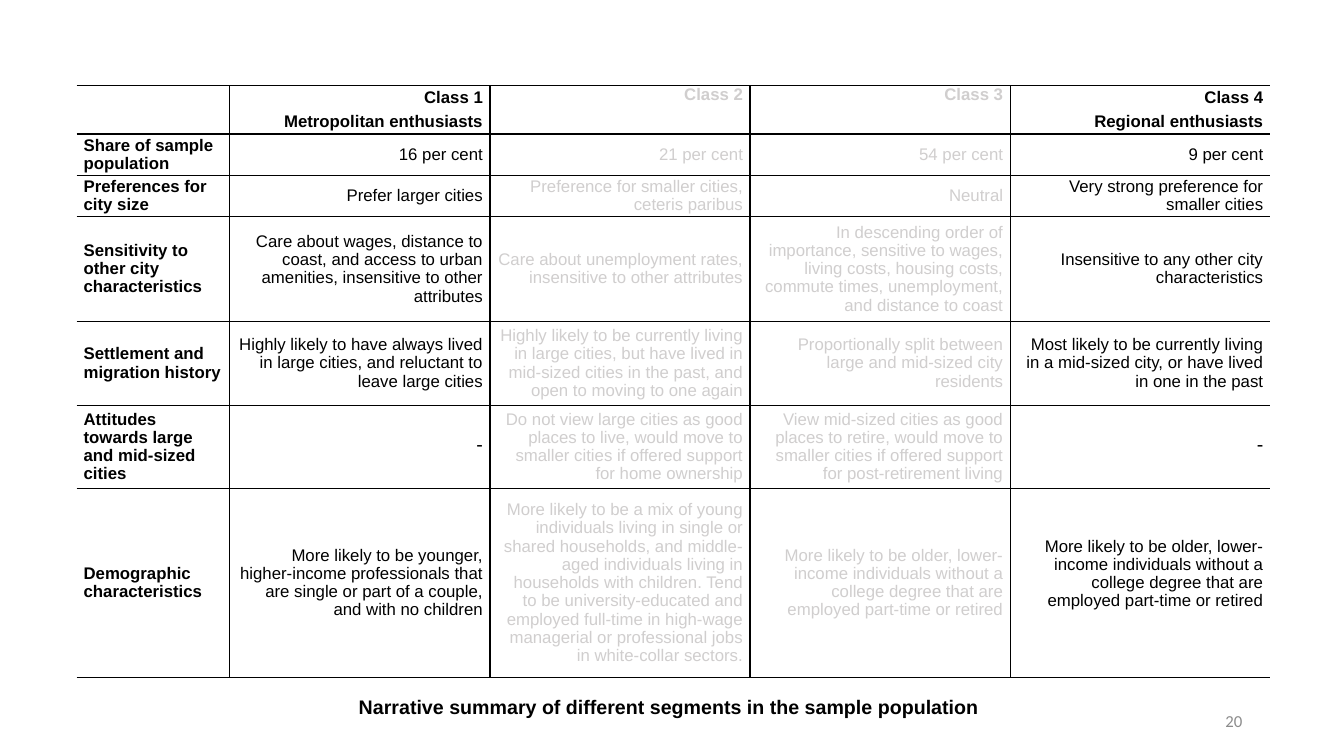
"""Build a slide with a table that summarises four segments of a sample population."""
from lxml import etree
from pptx import Presentation
from pptx.dml.color import RGBColor
from pptx.enum.text import MSO_ANCHOR, MSO_AUTO_SIZE, PP_ALIGN
from pptx.oxml.ns import qn
from pptx.util import Emu, Pt

PX = 9144
LEFT, CENTER, RIGHT = PP_ALIGN.LEFT, PP_ALIGN.CENTER, PP_ALIGN.RIGHT
TOP, MIDDLE = MSO_ANCHOR.TOP, MSO_ANCHOR.MIDDLE
FIT_SHAPE = MSO_AUTO_SIZE.SHAPE_TO_FIT_TEXT
TITLE_ONLY = 5

BLACK = RGBColor(0x00, 0x00, 0x00)
MUTED = RGBColor(0xD0, 0xCE, 0xCE)
PAGE_GRAY = RGBColor(0x8C, 0x8C, 0x8C)

COLUMN_WIDTHS = [152, 258, 258, 258, 258]
ROW_HEIGHTS = [48, 41, 41, 104, 83, 83, 187]
MUTED_COLUMNS = (2, 3)
OLDER_PROFILE = (
    "More likely to be older, lower-income individuals without a college degree "
    "that are employed part-time or retired"
)
SEGMENTS = [
    ["", "Class 1\nMetropolitan enthusiasts", "Class 2", "Class 3",
     "Class 4\nRegional enthusiasts"],
    ["Share of sample population", "16 per cent", "21 per cent", "54 per cent", "9 per cent"],
    ["Preferences for city size", "Prefer larger cities",
     "Preference for smaller cities, ceteris paribus", "Neutral",
     "Very strong preference for smaller cities"],
    ["Sensitivity to other city characteristics",
     "Care about wages, distance to coast, and access to urban amenities, "
     "insensitive to other attributes",
     "Care about unemployment rates, insensitive to other attributes",
     "In descending order of importance, sensitive to wages, living costs, housing costs, "
     "commute times, unemployment, and distance to coast",
     "Insensitive to any other city characteristics"],
    ["Settlement and migration history",
     "Highly likely to have always lived in large cities, and reluctant to leave large cities",
     "Highly likely to be currently living in large cities, but have lived in mid-sized cities "
     "in the past, and open to moving to one again",
     "Proportionally split between large and mid-sized city residents",
     "Most likely to be currently living in a mid-sized city, or have lived in one in the past"],
    ["Attitudes towards large and mid-sized cities", "-",
     "Do not view large cities as good places to live, would move to smaller cities "
     "if offered support for home ownership",
     "View mid-sized cities as good places to retire, would move to smaller cities "
     "if offered support for post-retirement living",
     "-"],
    ["Demographic characteristics",
     "More likely to be younger, higher-income professionals that are single or part of a "
     "couple, and with no children",
     "More likely to be a mix of young individuals living in single or shared households, and "
     "middle-aged individuals living in households with children. Tend to be "
     "university-educated and employed full-time in high-wage managerial or professional jobs "
     "in white-collar sectors.",
     OLDER_PROFILE, OLDER_PROFILE],
]


def px(length):
    return Emu(length * PX)


def write(frame, text, size=12, font="Arial", color=BLACK, bold=False, align=LEFT,
          line=None, gap=0):
    for index, words in enumerate(text.split("\n")):
        para = frame.add_paragraph() if index else frame.paragraphs[0]
        para.alignment = align
        para.space_before = para.space_after = Pt(gap)
        if line:
            para.line_spacing = Pt(line)
        span = para.add_run()
        span.text = words
        span.font.size = Pt(size)
        span.font.name = font
        span.font.bold = bold
        span.font.color.rgb = color


def draw_borders(cell, hidden):
    properties = cell._tc.get_or_add_tcPr()
    for index, side in enumerate(("lnL", "lnR", "lnT", "lnB")):
        border = etree.Element(qn(f"a:{side}"), w=str(Pt(1)))
        if side == hidden:
            etree.SubElement(border, qn("a:noFill"))
        else:
            fill = etree.SubElement(border, qn("a:solidFill"))
            etree.SubElement(fill, qn("a:srgbClr"), val=str(BLACK))
        properties.insert(index, border)


class Page:
    """Hold the current slide and add styled elements to it."""

    def __init__(self, deck):
        self.slide = deck.slides.add_slide(deck.slide_layouts[TITLE_ONLY])

    def title(self, text, left, top, width, height, **style):
        box = self.slide.shapes.title
        box.left, box.top, box.width, box.height = map(px, (left, top, width, height))
        frame = box.text_frame
        frame.word_wrap = True
        frame.auto_size = FIT_SHAPE
        frame.vertical_anchor = TOP
        write(frame, text, **style)

    def text(self, text, left, top, width, height, **style):
        box = self.slide.shapes.add_textbox(*map(px, (left, top, width, height)))
        box.text_frame.word_wrap = True
        box.text_frame.vertical_anchor = MIDDLE
        write(box.text_frame, text, **style)

    def table(self, rows, left, top, widths, heights):
        bounds = map(px, (left, top, sum(widths), sum(heights)))
        table = self.slide.shapes.add_table(len(rows), len(widths), *bounds).table
        table.first_row = table.horz_banding = False
        for column, width in zip(table.columns, widths):
            column.width = px(width)
        for row, height in zip(table.rows, heights):
            row.height = px(height)
        for row_index, texts in enumerate(rows):
            for column_index, text in enumerate(texts):
                self.fill_cell(table.cell(row_index, column_index), text,
                               row_index, column_index, len(widths) - 1)
        return table

    def fill_cell(self, cell, text, row, column, last_column):
        muted = column in MUTED_COLUMNS
        cell.fill.background()
        cell.margin_left = cell.margin_right = px(7)
        cell.margin_top = cell.margin_bottom = 0
        cell.vertical_anchor = TOP if muted and row == 0 else MIDDLE
        draw_borders(cell, {0: "lnL", last_column: "lnR"}.get(column))
        if text:
            write(cell.text_frame, text, size=14 if text == "-" else 12,
                  color=MUTED if muted else BLACK, bold=row == 0 or column == 0,
                  align=RIGHT if column else LEFT, line=13, gap=2)


def main():
    deck = Presentation()
    deck.slide_width, deck.slide_height = px(1333), px(750)
    page = Page(deck)
    table = page.table(SEGMENTS, 76, 85, COLUMN_WIDTHS, ROW_HEIGHTS)
    table.cell(6, 4).margin_bottom = px(18)
    page.title("Narrative summary of different segments in the sample population",
               330, 684, 667, 34, size=14, bold=True, align=CENTER)
    page.text("20", 942, 695, 300, 40, font="Calibri", color=PAGE_GRAY, align=RIGHT)
    deck.save("out.pptx")


if __name__ == "__main__":
    main()
